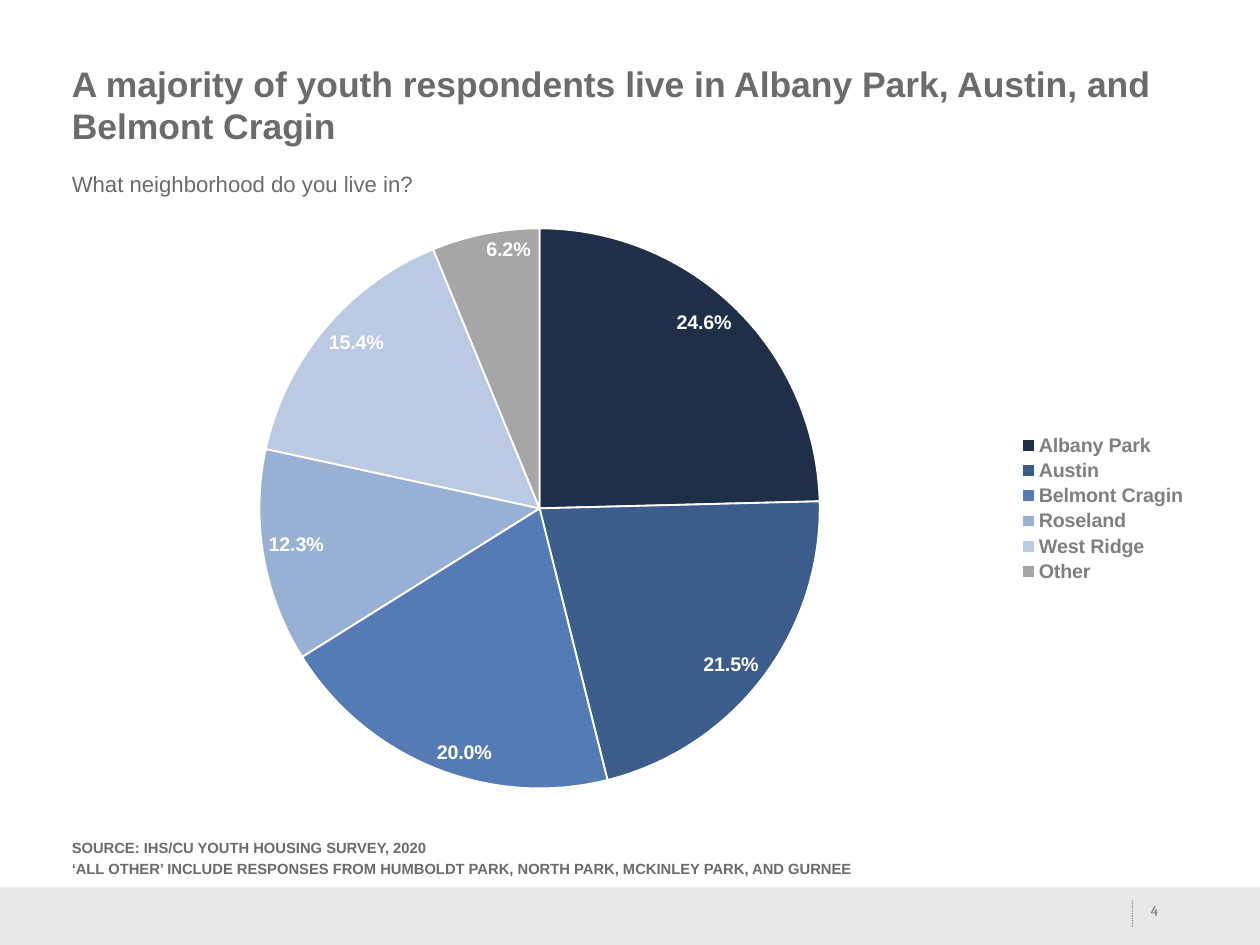
import dataclasses

import lxml.etree
import pptx
import pptx.chart.data
import pptx.dml.color
import pptx.enum.chart
import pptx.enum.dml
import pptx.enum.shapes
import pptx.enum.text
import pptx.oxml.ns
import pptx.util

Inches = pptx.util.Inches
Pt = pptx.util.Pt


@dataclasses.dataclass(frozen=True)
class Theme:
    text: str = "6B6B6B"
    legend: str = "808080"
    footer: str = "E8E8E8"
    white: str = "FFFFFF"
    font: str = "Arial"
    number_font: str = "Cambria"
    title_size: float = 28.8
    question_size: float = 18
    chart_size: float = 16
    small_size: float = 12


THEME = Theme()

NEIGHBORHOODS = [
    ("Albany Park", 0.246, "1F2F47"),
    ("Austin", 0.215, "3C5C8C"),
    ("Belmont Cragin", 0.2, "557BB5"),
    ("Roseland", 0.123, "98B0D3"),
    ("West Ridge", 0.154, "BBCAE2"),
    ("Other", 0.062, "A6A6A6"),
]
LEFT = 0.71
CONTENT_WIDTH = 12.8


def rgb(value):
    return pptx.dml.color.RGBColor.from_string(value)


def style_font(font, size, color=THEME.text, bold=False, name=THEME.font):
    font.name = name
    font.size = Pt(size)
    font.bold = bold
    font.color.rgb = rgb(color)


def place(shape, left, top, width, height):
    shape.left, shape.top = Inches(left), Inches(top)
    shape.width, shape.height = Inches(width), Inches(height)


def fill_placeholder(shape, lines, size, bold=False):
    frame = shape.text_frame
    frame.word_wrap = True
    frame.auto_size = pptx.enum.text.MSO_AUTO_SIZE.NONE
    frame.vertical_anchor = pptx.enum.text.MSO_ANCHOR.TOP
    for index, line in enumerate(lines):
        para = frame.add_paragraph() if index else frame.paragraphs[0]
        para.alignment = pptx.enum.text.PP_ALIGN.LEFT
        para.space_before = Pt(3 if index else 0)
        span = para.add_run()
        span.text = line
        style_font(span.font, size, bold=bold)


def add_footer(page):
    band = page.shapes.add_shape(
        pptx.enum.shapes.MSO_SHAPE.RECTANGLE,
        Inches(0), Inches(10.02), Inches(14.22), Inches(0.65))
    band.shadow.inherit = False
    band.fill.solid()
    band.fill.fore_color.rgb = rgb(THEME.footer)
    band.line.fill.background()

    divider = page.shapes.add_connector(
        pptx.enum.shapes.MSO_CONNECTOR.STRAIGHT,
        Inches(12.78), Inches(10.17), Inches(12.78), Inches(10.46))
    divider.line.color.rgb = rgb(THEME.text)
    divider.line.width = Pt(1)
    divider.line.dash_style = pptx.enum.dml.MSO_LINE.ROUND_DOT
    qn = pptx.oxml.ns.qn
    properties = divider.line._get_or_add_ln().getparent()
    color = properties.find(".//" + qn("a:srgbClr"))
    lxml.etree.SubElement(color, qn("a:alpha")).set("val", "75000")
    lxml.etree.SubElement(properties, qn("a:effectLst"))


def add_page_number(page, number):
    box = page.shapes.add_textbox(
        Inches(12.85), Inches(9.81), Inches(0.36), Inches(0.57))
    frame = box.text_frame
    frame.word_wrap = True
    frame.vertical_anchor = pptx.enum.text.MSO_ANCHOR.BOTTOM
    frame.margin_left = frame.margin_right = Inches(0)
    frame.margin_top = frame.margin_bottom = Inches(0)
    para = frame.paragraphs[0]
    para.alignment = pptx.enum.text.PP_ALIGN.CENTER
    para.line_spacing = 1.5
    span = para.add_run()
    span.text = number
    style_font(span.font, THEME.small_size, name=THEME.number_font)


def add_neighborhood_pie(page):
    names, shares, colors = zip(*NEIGHBORHOODS)
    chart_data = pptx.chart.data.CategoryChartData(number_format="0.0%")
    chart_data.categories = names
    chart_data.add_series("Series 1", shares)
    chart = page.shapes.add_chart(
        pptx.enum.chart.XL_CHART_TYPE.PIE,
        Inches(LEFT), Inches(2.44), Inches(CONTENT_WIDTH), Inches(6.6),
        chart_data).chart
    chart.has_title = False
    style_font(chart.font, 10)

    chart.has_legend = True
    chart.legend.position = pptx.enum.chart.XL_LEGEND_POSITION.RIGHT
    chart.legend.include_in_layout = False
    style_font(chart.legend.font, THEME.chart_size, THEME.legend, bold=True)

    plot = chart.plots[0]
    plot.vary_by_categories = True
    for index, color in enumerate(colors):
        slice_format = plot.series[0].points[index].format
        slice_format.fill.solid()
        slice_format.fill.fore_color.rgb = rgb(color)
        slice_format.line.color.rgb = rgb(THEME.white)
        slice_format.line.width = Pt(1.5)

    labels = plot.series[0].data_labels
    labels.show_value = True
    labels.show_percentage = False
    labels.number_format = "0.0%"
    labels.number_format_is_linked = False
    labels.position = pptx.enum.chart.XL_LABEL_POSITION.INSIDE_END
    style_font(labels.font, THEME.chart_size, THEME.white, bold=True)


def main():
    deck = pptx.Presentation()
    deck.slide_width, deck.slide_height = Inches(14.22), Inches(10.67)
    comparison_layout = deck.slide_layouts[4]
    page = deck.slides.add_slide(comparison_layout)
    holders = {holder.placeholder_format.idx: holder
               for holder in page.placeholders}
    title, question, source = holders[0], holders[1], holders[3]
    for unused in (holders[2], holders[4]):
        unused.element.getparent().remove(unused.element)

    place(title, LEFT, 0.65, CONTENT_WIDTH, 0.74)
    fill_placeholder(
        title,
        ["A majority of youth respondents live in Albany Park, Austin, "
         "and Belmont Cragin"],
        THEME.title_size, bold=True)
    place(question, LEFT, 1.87, CONTENT_WIDTH, 0.58)
    fill_placeholder(question, ["What neighborhood do you live in?"],
                     THEME.question_size)
    place(source, LEFT, 9.42, 13.51, 0.6)
    fill_placeholder(
        source,
        ["SOURCE: IHS/CU YOUTH HOUSING SURVEY, 2020",
         "‘ALL OTHER’ INCLUDE RESPONSES FROM HUMBOLDT PARK, NORTH PARK, "
         "MCKINLEY PARK, AND GURNEE"],
        THEME.small_size, bold=True)

    add_footer(page)
    add_page_number(page, "4")
    add_neighborhood_pie(page)
    deck.save("out.pptx")


if __name__ == "__main__":
    main()
